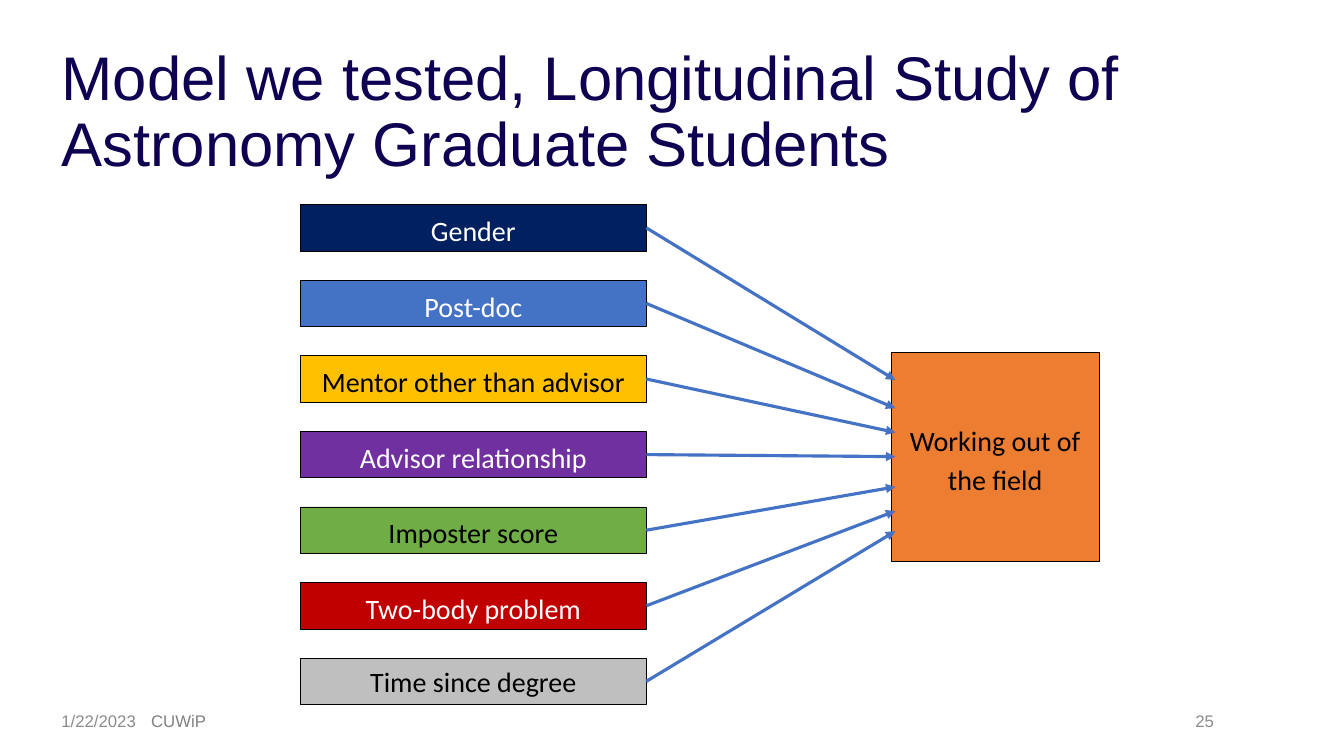
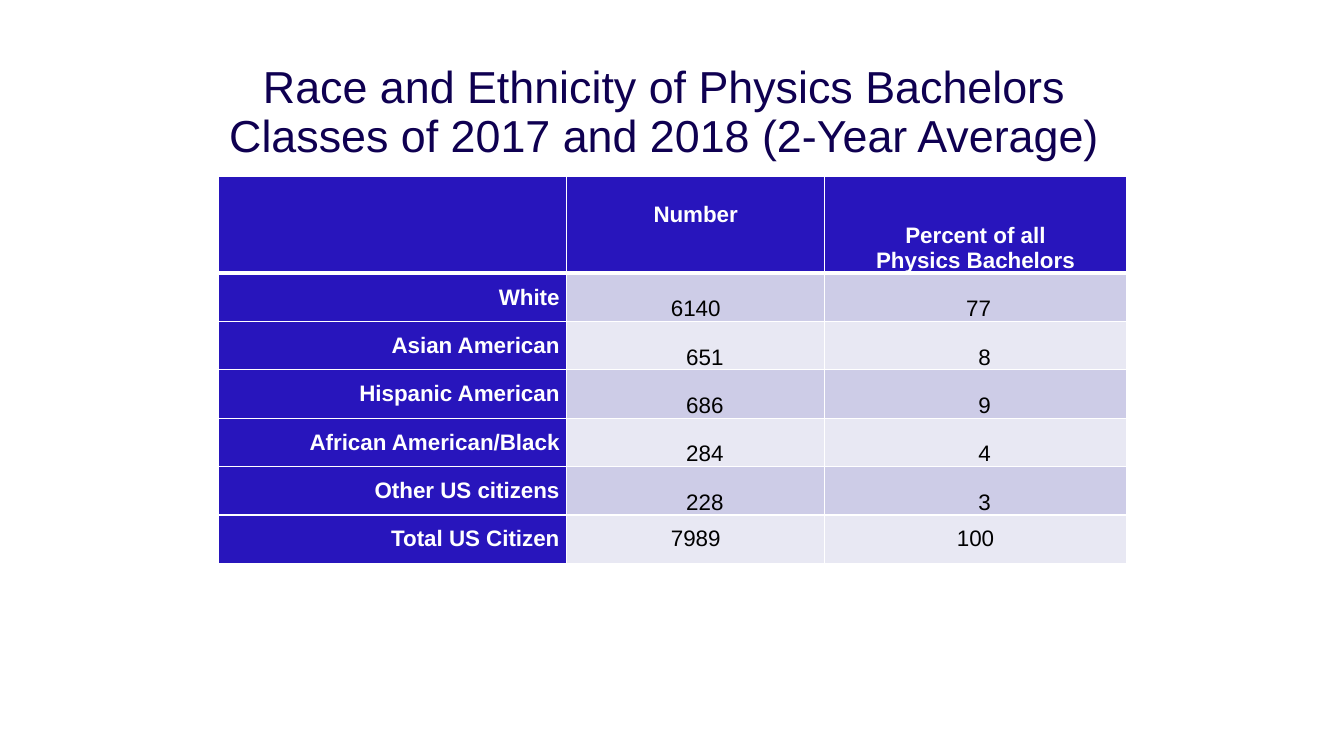
from pptx import Presentation
from pptx.dml.color import RGBColor as RGB
from pptx.enum.shapes import MSO_CONNECTOR as Link, MSO_SHAPE as Form
from pptx.enum.text import MSO_ANCHOR as Anchor, PP_ALIGN as Align
from pptx.oxml import parse_xml
from pptx.oxml.ns import nsdecls
from pptx.util import Inches as In, Pt

HEX = {
    "title": "0F0051", "date": "8C8C8C", "event": "808080",
    "white": "FFFFFF", "black": "000000", "arrow": "4472C4",
    "navy": "002060", "blue": "4472C4", "gold": "FFC000",
    "purple": "7030A0", "green": "70AD47", "red": "C00000",
    "grey": "BFBFBF", "orange": "ED7D31",
    "head": "2815BC", "dark": "CDCCE7", "light": "E8E8F3",
}

# Content: model slide
MODEL = ["Model we tested, Longitudinal Study of Astronomy Graduate Students"]
# label, fill, text colour, height where the arrow lands
CAUSES = [
    ("Gender", "navy", "white", 3.77),
    ("Post-doc", "blue", "white", 4.05),
    ("Mentor other than advisor", "gold", "black", 4.29),
    ("Advisor relationship", "purple", "white", 4.53),
    ("Imposter score", "green", "black", 4.83),
    ("Two-body problem", "red", "white", 5.07),
    ("Time since degree", "grey", "black", 5.27),
]
RESULT = "Working out of the field"
# text, colour, place, anchor, alignment
FOOT = [
    ("1/22/2023", "date", (0.51, 6.95, 3, 0.4), Anchor.MIDDLE, Align.LEFT),
    ("CUWiP", "event", (1.4, 7, 4.5, 0.4), Anchor.TOP, Align.LEFT),
    ("25", "date", (9.14, 6.95, 3, 0.4), Anchor.MIDDLE, Align.RIGHT),
]

# Content: table slide
RACE = ["Race and Ethnicity of Physics Bachelors",
        "Classes of 2017 and 2018 (2-Year Average)"]
ROWS = [
    ("", "Number", "Percent of all\nPhysics Bachelors"),
    ("White", "6140", "77"),
    ("Asian American", "651", "8"),
    ("Hispanic American", "686", "9"),
    ("African American/Black", "284", "4"),
    ("Other US citizens", "228", "3"),
    ("Total US Citizen", "7989", "100"),
]

# Grids, in inches
WIDE, HIGH = 13.33, 7.5
LEFT, TOP, BOX_W, BOX_H, STEP = 2.98, 2.03, 3.43, 0.46, 0.75
GOAL = (8.84, 3.5, 2.06, 2.07)
TIP = 8.88
COLS, ROW_H, SPACE = (3.45, 2.56, 2.99), 0.48, 0.06


def color(name):
    return RGB.from_string(HEX[name])


def style(para, align, **look):
    para.alignment = align
    look = {"name": "Arial", "bold": False, **look}
    para.font.color.rgb = color(look.pop("color"))
    for key, val in look.items():
        setattr(para.font, key, val)


def set_pad(part, left, top, right, foot):
    pads = {"left": left, "top": top, "right": right, "bottom": foot}
    for side, gap in pads.items():
        setattr(part, f"margin_{side}", In(gap))


def add_slide(deck, lines, size, align):
    slide = deck.slides.add_slide(deck.slide_layouts[5])
    title = slide.shapes.title
    spot = zip(("left", "top", "width", "height"), (0.51, 0.4, 12.16, 1.45))
    for key, val in spot:
        setattr(title, key, In(val))
    frame = title.text_frame
    frame.word_wrap, frame.vertical_anchor = True, Anchor.MIDDLE
    para = frame.paragraphs[0]
    for i, line in enumerate(lines):
        if i:
            para.add_line_break()
        para.add_run().text = line
    style(para, align, size=Pt(size), color="title")
    para.line_spacing = 0.9
    return slide


def add_box(slide, text, spot, fill, ink, lead=1.15):
    box = slide.shapes.add_shape(Form.RECTANGLE, *map(In, spot))
    box.shadow.inherit = False
    box.fill.solid()
    box.fill.fore_color.rgb = color(fill)
    box.line.color.rgb = color("black")
    box.line.width = Pt(0.5)
    frame = box.text_frame
    frame.word_wrap, frame.vertical_anchor = True, Anchor.MIDDLE
    set_pad(frame, 0.06, 0.03, 0.06, 0.03)
    frame.text = text
    para = frame.paragraphs[0]
    style(para, Align.CENTER, name="Calibri", size=Pt(20), color=ink)
    para.line_spacing = lead
    return box


def add_arrow(slide, box, y):
    start = (box.left + box.width, box.top + box.height // 2)
    arrow = slide.shapes.add_connector(Link.STRAIGHT, *start, In(TIP), In(y))
    arrow.begin_connect(box, 3)
    arrow.line.color.rgb = color("arrow")
    arrow.line.width = Pt(2.25)
    arrow.line._get_or_add_ln().append(
        parse_xml(f'<a:tailEnd {nsdecls("a")} type="triangle"/>'))
    arrow._element.spPr.append(parse_xml(f'<a:effectLst {nsdecls("a")}/>'))


def add_foot(slide):
    for text, ink, spot, anchor, align in FOOT:
        frame = slide.shapes.add_textbox(*map(In, spot)).text_frame
        frame.word_wrap, frame.vertical_anchor = True, anchor
        frame.text = text
        style(frame.paragraphs[0], align, size=Pt(12), color=ink)


def add_edges(cell, row):
    thick = {"T": 3 if row == 1 else 1, "B": 3 if row == 0 else 1}
    props = cell._tc.get_or_add_tcPr()
    for i, side in enumerate("LRTB"):
        width = Pt(thick.get(side, 1))
        props.insert(i, parse_xml(
            f'<a:ln{side} {nsdecls("a")} w="{width}"><a:solidFill>'
            f'<a:srgbClr val="{HEX["white"]}"/></a:solidFill></a:ln{side}>'))


def fill_cell(cell, text, row, col):
    head, last = row == 0 or col == 0, row == len(ROWS) - 1
    band = "dark" if row % 2 else "light"
    cell.fill.solid()
    cell.fill.fore_color.rgb = color("head" if head else band)
    add_edges(cell, row)
    # Short numbers are pushed right so that their digits line up
    shift = 0
    if not (head or last):
        shift = 3 if len(text) in (1, 3) else col - 1
    drop = 0.26 if (row, col) == (0, 1) else 0
    set_pad(cell, 0.07 + shift * SPACE, drop, 0.07, 0)
    if col == 0 or last:
        cell.vertical_anchor = Anchor.MIDDLE
    else:
        cell.vertical_anchor = Anchor.TOP if drop else Anchor.BOTTOM
    cell.text = text
    for para in cell.text_frame.paragraphs:
        style(para, Align.RIGHT if col == 0 else Align.CENTER, size=Pt(16),
              bold=head, color="white" if head else "black")


def add_model(deck):
    slide = add_slide(deck, MODEL, 44, Align.LEFT)
    add_foot(slide)
    add_box(slide, RESULT, GOAL, "orange", "black")
    for i, (text, fill, ink, y) in enumerate(CAUSES):
        lead = 1 if i == len(CAUSES) - 1 else 1.15
        spot = (LEFT, TOP + i * STEP, BOX_W, BOX_H)
        add_arrow(slide, add_box(slide, text, spot, fill, ink, lead), y)


def add_race(deck):
    slide = add_slide(deck, RACE, 32, Align.CENTER)
    spot = (2.17, 1.75, sum(COLS), ROW_H * (len(ROWS) + 1))
    table = slide.shapes.add_table(len(ROWS), len(COLS), *map(In, spot)).table
    for col, width in zip(table.columns, COLS):
        col.width = In(width)
    for r, texts in enumerate(ROWS):
        table.rows[r].height = In(ROW_H if r else 2 * ROW_H)
        for c, text in enumerate(texts):
            fill_cell(table.cell(r, c), text, r, c)


def main():
    deck = Presentation()
    deck.slide_width, deck.slide_height = In(WIDE), In(HIGH)
    add_model(deck)
    add_race(deck)
    deck.save("out.pptx")


if __name__ == "__main__":
    main()
